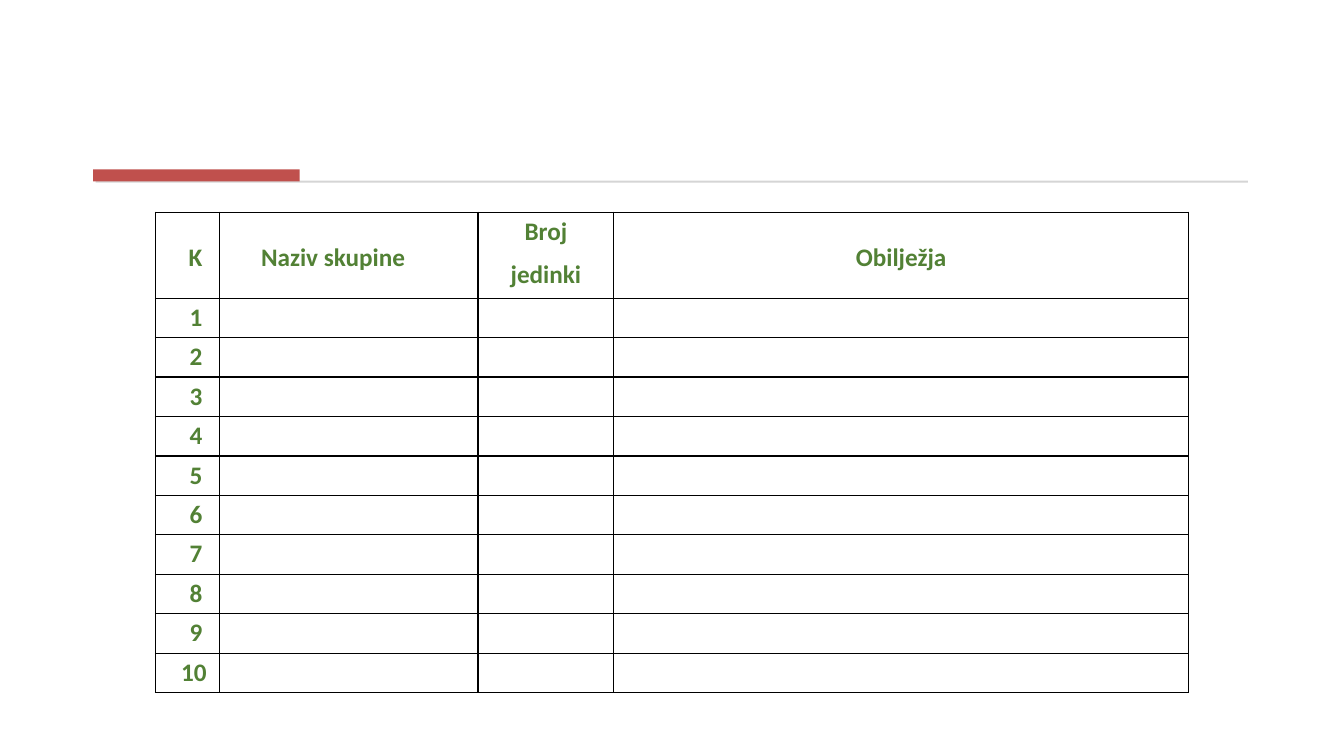
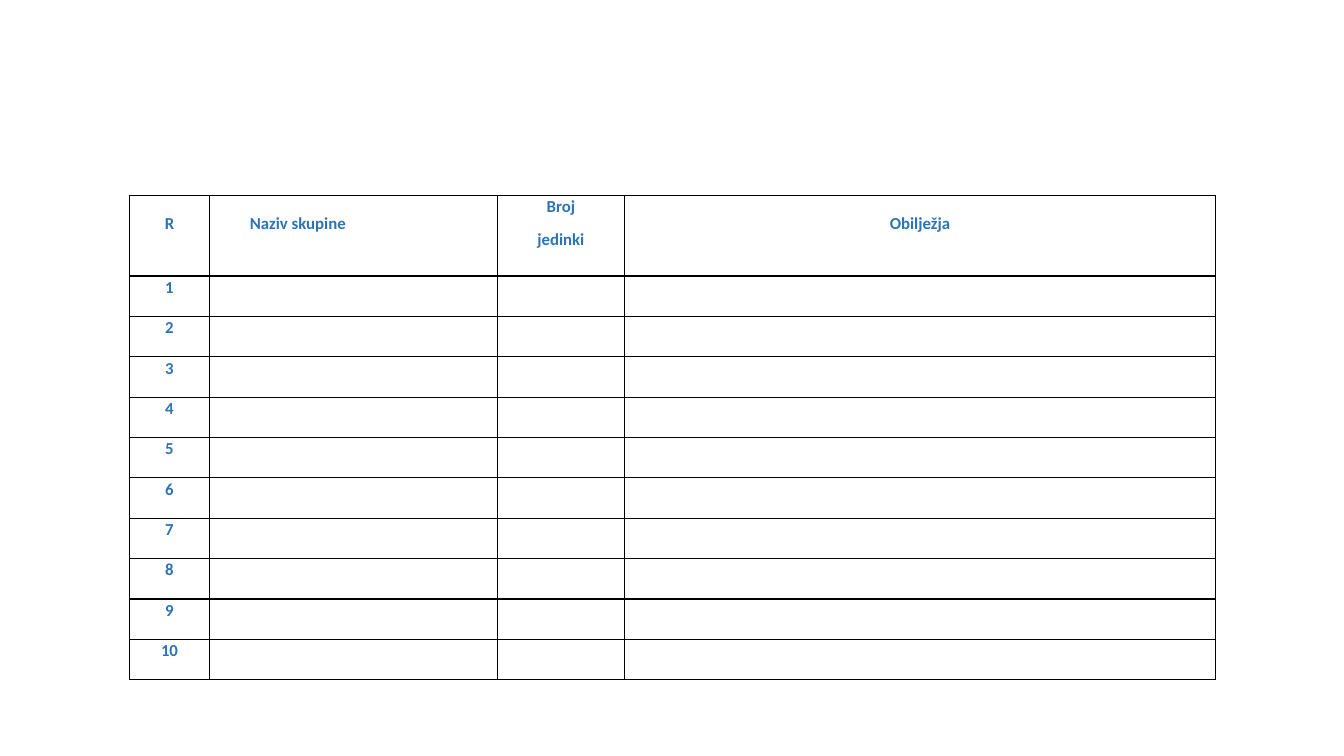
from dataclasses import dataclass

from lxml.etree import SubElement
from pptx import Presentation
from pptx.dml.color import RGBColor
from pptx.enum.shapes import MSO_SHAPE as Shape
from pptx.enum.text import PP_ALIGN as Align
from pptx.oxml.ns import qn
from pptx.slide import Slide
from pptx.table import _Cell as Cell
from pptx.util import Pt

COLORS = {
    "rule": "D5D5D5",
    "accent": "C0504D",
    "border": "000000",
    "green": "528135",
    "blue": "2D74B5",
}
FONT = "Calibri"
LINE_SPACING = 1.07
HEADINGS = ["Naziv skupine", "Broj\njedinki", "Obilježja"]
GROUP_COUNT = 10


@dataclass(frozen=True)
class Bar:
    left: float
    top: float
    width: float
    height: float
    color: str


@dataclass(frozen=True)
class GroupTable:
    key: str
    color: str
    size: float
    left: float
    top: float
    columns: tuple[float, ...]
    header_height: float
    row_height: float
    heading_inset: float
    name_inset: float
    inset: float
    key_align: Align
    key_inset: float
    last_key_inset: float


BARS = [
    Bar(68.4, 129, 823, 1.4, "rule"),
    Bar(66.5, 121, 147.5, 8.6, "accent"),
]
GREEN_TABLE = GroupTable(
    key="K", color="green", size=18, left=111, top=151.5,
    columns=(46, 184.5, 97, 410.5), header_height=61.5, row_height=28.2,
    heading_inset=18.5, name_inset=29.5, inset=1.4,
    key_align=Align.RIGHT, key_inset=12.5, last_key_inset=9.3,
)
BLUE_TABLE = GroupTable(
    key="R", color="blue", size=12, left=92.5, top=139.5,
    columns=(57.2, 205.5, 91, 422), header_height=57.7, row_height=28.85,
    heading_inset=11.75, name_inset=28.8, inset=0,
    key_align=Align.CENTER, key_inset=0, last_key_inset=0,
)


def rgb(name: str) -> RGBColor:
    return RGBColor.from_string(COLORS[name])


def add_bar(slide: Slide, bar: Bar) -> None:
    shape = slide.shapes.add_shape(
        Shape.RECTANGLE, Pt(bar.left), Pt(bar.top), Pt(bar.width), Pt(bar.height)
    )
    shape.shadow.inherit = False
    shape.fill.solid()
    shape.fill.fore_color.rgb = rgb(bar.color)
    shape.line.fill.background()


def write_text(cell: Cell, text: str, *, size: float, color: str,
               align: Align = Align.CENTER, top: float = 0,
               left: float = 0, right: float = 0) -> None:
    """Write one paragraph per line of text, with insets in points."""
    cell.margin_top, cell.margin_left, cell.margin_right = Pt(top), Pt(left), Pt(right)
    cell.text_frame.text = text
    for index, paragraph in enumerate(cell.text_frame.paragraphs):
        paragraph.alignment = align
        paragraph.line_spacing = LINE_SPACING
        paragraph.space_before = Pt(7.5 if index else 0)
        font = paragraph.runs[0].font
        font.name, font.size, font.bold = FONT, Pt(size), True
        font.color.rgb = rgb(color)


def reset_cell(cell: Cell) -> None:
    """Clear insets and fill, and draw a thin border on all four sides."""
    cell.margin_left = cell.margin_right = cell.margin_top = cell.margin_bottom = 0
    properties = cell._tc.get_or_add_tcPr()
    for side in ("lnL", "lnR", "lnT", "lnB"):
        line = SubElement(properties, qn(f"a:{side}"), w=str(Pt(1)))
        fill = SubElement(line, qn("a:solidFill"))
        SubElement(fill, qn("a:srgbClr"), val=COLORS["border"])
    cell.fill.background()


def add_group_table(slide: Slide, group: GroupTable) -> None:
    height = group.header_height + GROUP_COUNT * group.row_height
    table = slide.shapes.add_table(
        GROUP_COUNT + 1, len(group.columns), Pt(group.left), Pt(group.top),
        Pt(sum(group.columns)), Pt(height),
    ).table
    table.first_row = table.horz_banding = False
    for column, width in zip(table.columns, group.columns):
        column.width = Pt(width)
    for index, row in enumerate(table.rows):
        row.height = Pt(group.row_height if index else group.header_height)
    for cell in table.iter_cells():
        reset_cell(cell)

    style = {"size": group.size, "color": group.color}
    heading_top = group.inset + group.heading_inset
    write_text(table.cell(0, 0), group.key, align=group.key_align,
               top=heading_top, right=group.key_inset, **style)
    name, count, features = HEADINGS
    write_text(table.cell(0, 1), name, align=Align.LEFT,
               top=heading_top, left=group.name_inset, **style)
    write_text(table.cell(0, 2), count, top=group.inset, **style)
    write_text(table.cell(0, 3), features, top=heading_top, **style)
    for number in range(1, GROUP_COUNT + 1):
        right = group.last_key_inset if number == GROUP_COUNT else group.key_inset
        write_text(table.cell(number, 0), str(number), align=group.key_align,
                   top=group.inset, right=right, **style)


def main() -> None:
    presentation = Presentation()
    presentation.slide_width, presentation.slide_height = Pt(960), Pt(540)
    blank_layout = presentation.slide_layouts[6]
    for bars, group in ((BARS, GREEN_TABLE), ([], BLUE_TABLE)):
        slide = presentation.slides.add_slide(blank_layout)
        for bar in bars:
            add_bar(slide, bar)
        add_group_table(slide, group)
    presentation.save("out.pptx")


if __name__ == "__main__":
    main()
